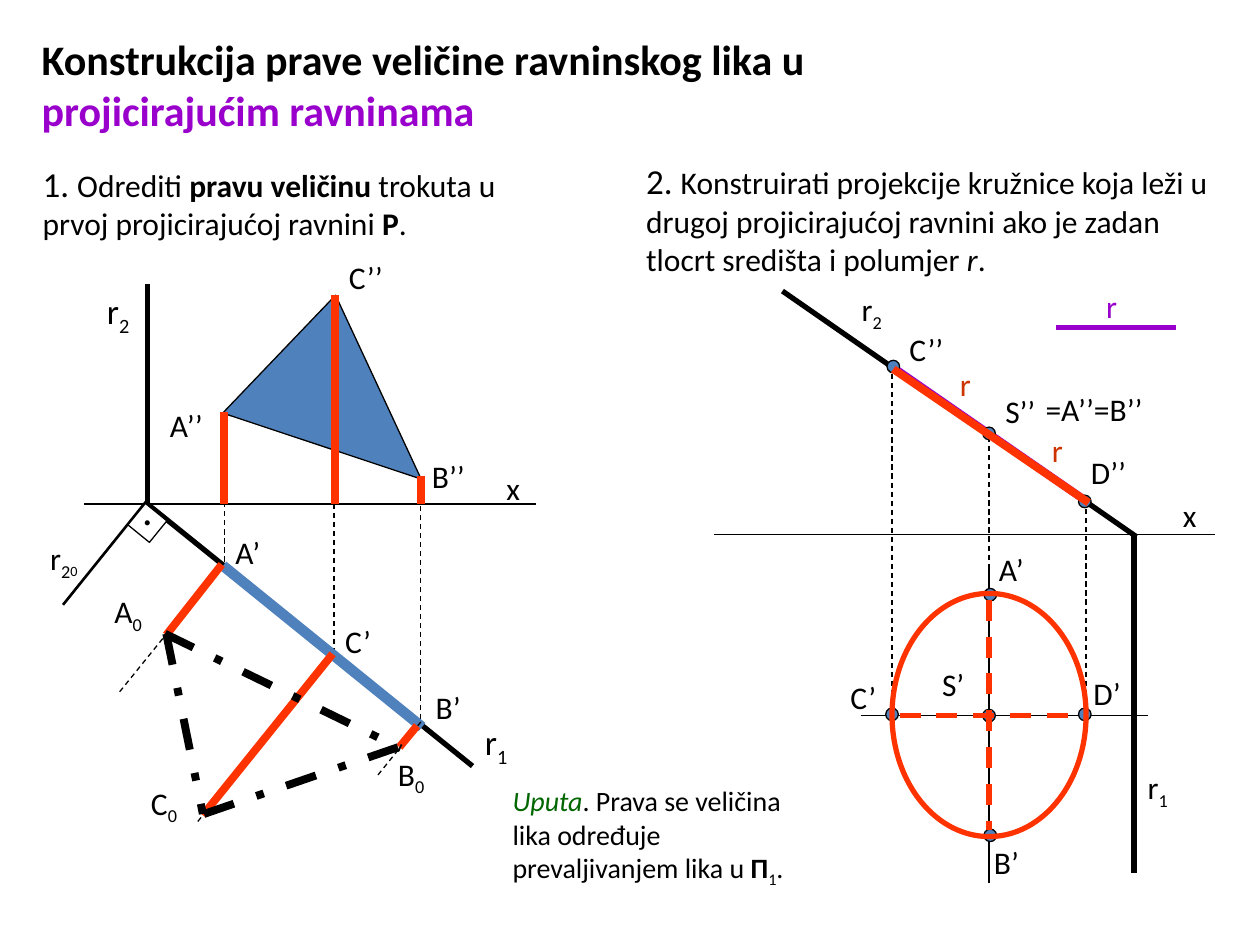
from lxml import etree
from pptx import Presentation
from pptx.dml.color import RGBColor
from pptx.enum.dml import MSO_LINE_DASH_STYLE as DASH
from pptx.enum.shapes import MSO_CONNECTOR, MSO_SHAPE as SHAPE
from pptx.enum.text import MSO_ANCHOR, MSO_AUTO_SIZE, PP_ALIGN
from pptx.oxml.ns import qn
from pptx.util import Inches, Pt

COLORS = {
    "black": "000000", "white": "FFFFFF", "blue": "4F81BD", "red": "FF3300",
    "purple": "9900CC", "green": "006600", "rust": "CC3300",
}
RGB = {name: RGBColor.from_string(code) for name, code in COLORS.items()}

prs = Presentation()
prs.slide_width, prs.slide_height = Inches(10), Inches(7.5)
slide = prs.slides.add_slide(prs.slide_layouts[5])
shapes = slide.shapes


def add_line(x1, y1, x2, y2, color="black", width=0.75, dash=None):
    line = shapes.add_connector(
        MSO_CONNECTOR.STRAIGHT, Inches(x1), Inches(y1), Inches(x2), Inches(y2))
    line.line.color.rgb = RGB[color]
    line.line.width = Pt(width)
    if dash:
        line.line.dash_style = dash
    etree.SubElement(line._element.spPr, qn("a:effectLst"))


def fill_text(frame, runs, size=18, color="black"):
    frame.word_wrap = True
    paragraph = frame.paragraphs[0]
    paragraph.alignment = PP_ALIGN.LEFT
    paragraph.font.name = "Calibri"
    paragraph.font.size = Pt(size)
    paragraph.font.color.rgb = RGB[color]
    for text, style in runs:
        run = paragraph.add_run()
        run.text = text
        if "bold" in style:
            run.font.bold = True
        if "italic" in style:
            run.font.italic = True
        if "size" in style:
            run.font.size = Pt(style["size"])
        if "color" in style:
            run.font.color.rgb = RGB[style["color"]]
        if "sub" in style:
            run._r.get_or_add_rPr().set("baseline", "-25000")


bold, italic, sub = {"bold": True}, {"italic": True}, {"sub": True}

title = shapes.title
title.left, title.top = Inches(0.23), Inches(0.21)
title.width, title.height = Inches(7.67), Inches(0.92)
title.text_frame.auto_size = MSO_AUTO_SIZE.NONE
title.text_frame.vertical_anchor = MSO_ANCHOR.MIDDLE
fill_text(title.text_frame, [
    ("Konstrukcija prave veličine ravninskog lika u ", bold),
    ("projicirajućim ravninama", {"bold": True, "color": "purple"}),
], 24)

for x1, y1, x2, y2, width in [
    (7.85, 4.48, 7.85, 7.01, 0.75),
    (0.67, 4, 4.25, 4, 0.75),
    (1.17, 2.25, 1.17, 4, 3),
    (1.17, 4, 3.75, 6.08, 3),
]:
    add_line(x1, y1, x2, y2, width=width)

triangle = shapes.add_shape(
    SHAPE.ISOSCELES_TRIANGLE, Inches(1.91), Inches(2.4), Inches(1.66), Inches(1.17))
triangle.adjustments[0] = 0.334
triangle.rotation = 18.4

for x, top, bottom in [(1.78, 3.27, 4.5), (2.65, 2.35, 5.19), (3.34, 3.8, 5.77)]:
    add_line(x, top, x, bottom, dash=DASH.DASH)
add_line(1.77, 4.49, 3.35, 5.77, "blue", 6)
add_line(0.5, 4.8, 1.16, 3.98, width=1.5)

right_angle = shapes.add_shape(
    SHAPE.RECTANGLE, Inches(1.06), Inches(4.04), Inches(0.22), Inches(0.22))
right_angle.rotation = 39.1

for x1, y1, x2, y2 in [
    (0.95, 5.49, 1.76, 4.49), (1.57, 6.52, 2.65, 5.19), (3, 6.15, 3.34, 5.73),
]:
    add_line(x1, y1, x2, y2, dash=DASH.DASH)
for x1, y1, x2, y2 in [
    (1.78, 3.27, 1.78, 4), (2.66, 2.34, 2.66, 4), (3.34, 3.78, 3.34, 4),
    (3.31, 5.76, 3.17, 5.93), (1.76, 4.48, 1.32, 5.04), (2.64, 5.19, 1.61, 6.47),
]:
    add_line(x1, y1, x2, y2, "red", 4.5)
for x1, y1, x2, y2 in [
    (1.32, 5.03, 1.61, 6.46), (1.31, 5.03, 3.18, 5.94), (1.62, 6.46, 3.19, 5.92),
]:
    add_line(x1, y1, x2, y2, width=4.5, dash=DASH.DASH_DOT)

add_line(5.67, 4.24, 9.64, 4.24)
add_line(6.21, 2.31, 9.02, 4.26, width=3)
add_line(9, 4.24, 9, 6.93, width=3)
add_line(8.38, 2.6, 9.33, 2.6, "purple", 3)
add_line(7.08, 2.91, 8.64, 3.99, "purple", 4.5)
add_line(6.83, 5.68, 9.11, 5.68)
for x, top, bottom in [(7.08, 2.97, 5.67), (7.85, 3.47, 5.64), (8.62, 3.97, 5.69)]:
    add_line(x, top, x, bottom, dash=DASH.DASH)

points = [
    shapes.add_shape(SHAPE.OVAL, Inches(x), Inches(y), Inches(0.1), Inches(0.1))
    for x, y in [
        (7.8, 5.63), (7.8, 3.39), (7.81, 6.58), (7.81, 4.67),
        (7.04, 2.86), (8.56, 3.93), (7.03, 5.62), (8.56, 5.62),
    ]
]
for figure in [triangle, right_angle, *points]:
    figure.shadow.inherit = False
    figure.fill.solid()
    figure.fill.fore_color.rgb = RGB["white" if figure is right_angle else "blue"]
    figure.line.color.rgb = RGB["black"]
    figure.line.width = Pt(0.75)

add_line(7.14, 5.68, 8.57, 5.68, "red", 3, DASH.DASH)
add_line(7.85, 4.76, 7.85, 6.59, "red", 3, DASH.DASH)
circle_plan = shapes.add_shape(
    SHAPE.OVAL, Inches(7.08), Inches(4.71), Inches(1.54), Inches(1.93))
circle_plan.shadow.inherit = False
circle_plan.fill.background()
circle_plan.line.color.rgb = RGB["red"]
circle_plan.line.width = Pt(3)
add_line(7.09, 2.93, 8.64, 3.99, "red", 4.5)

texts = [
    (0.24, 1.24, 4.14, 0.73, [
        ("1. ", {"size": 20}), ("Odrediti ", {}), ("pravu veličinu", bold),
        (" trokuta u prvoj projicirajućoj ravnini ", {}), ("P", bold), (".", {})], 18, "black"),
    (5.03, 1.22, 4.69, 1.03, [
        ("2. ", {"size": 20}),
        ("Konstruirati projekcije kružnice koja leži u drugoj projicirajućoj ravnini "
         "ako je zadan tlocrt središta i polumjer ", {}),
        ("r", italic), (".", {})], 18, "black"),
    (3.97, 6.17, 2.67, 0.91, [
        ("Uputa", {"italic": True, "color": "green"}),
        (". Prava se veličina lika određuje prevaljivanjem lika u ", {}),
        ("Π", bold), ("1", sub), (".", {})], 16, "black"),
    (3.75, 5.67, 0.67, 0.43, [("r", {}), ("1", sub)], 20, "black"),
    (0.75, 2.25, 0.67, 0.43, [("r", {}), ("2", sub)], 20, "black"),
    (0.3, 4.23, 0.57, 0.4,
     [("r", {}), ("2", sub), ("0", {"sub": True, "size": 14})], 18, "black"),
    (1.03, 3.79, 0.3, 0.5, [(".", {})], 24, "black"),
    (8.68, 2.23, 0.5, 0.37, [("r", {})], 18, "purple"),
    (7.52, 2.85, 0.43, 0.37, [("r", {})], 18, "rust"),
    (8.25, 3.37, 0.28, 0.37, [("r", {})], 18, "rust"),
]
for left, top, width, letter, index in [
    (3.92, 3.67, 0.33, "x", ""), (1.25, 3.17, 0.58, "A’’", ""),
    (3.33, 3.58, 0.58, "B’’", ""), (2.67, 2, 0.58, "C’’", ""),
    (1.77, 4.18, 0.6, "A’", ""), (2.64, 4.89, 0.57, "C’", ""),
    (3.36, 5.41, 0.57, "B’", ""), (0.81, 4.65, 0.53, "A", "0"),
    (1.1, 6.17, 0.54, "C", "0"), (3.06, 5.94, 0.56, "B", "0"),
    (6.74, 2.25, 0.45, "r", "2"), (9.29, 3.89, 0.35, "x", ""),
    (9.01, 6.05, 0.45, "r", "1"), (7.38, 5.23, 0.47, "S’", ""),
    (7.88, 3.06, 0.55, "S’’", ""), (7.83, 4.32, 0.52, "A’", ""),
    (7.79, 6.64, 0.49, "B’", ""), (7.12, 2.57, 0.57, "C’’", ""),
    (8.56, 3.55, 0.59, "D’’", ""), (6.65, 5.33, 0.45, "C’", ""),
    (8.58, 5.3, 0.47, "D’", ""), (8.2, 3.05, 0.97, "=A’’=B’’", ""),
]:
    runs = [(letter, {})] + ([(index, sub)] if index else [])
    texts.append((left, top, width, 0.4, runs, 18, "black"))

for left, top, width, height, runs, size, color in texts:
    box = shapes.add_textbox(Inches(left), Inches(top), Inches(width), Inches(height))
    fill_text(box.text_frame, runs, size, color)

prs.save("out.pptx")
